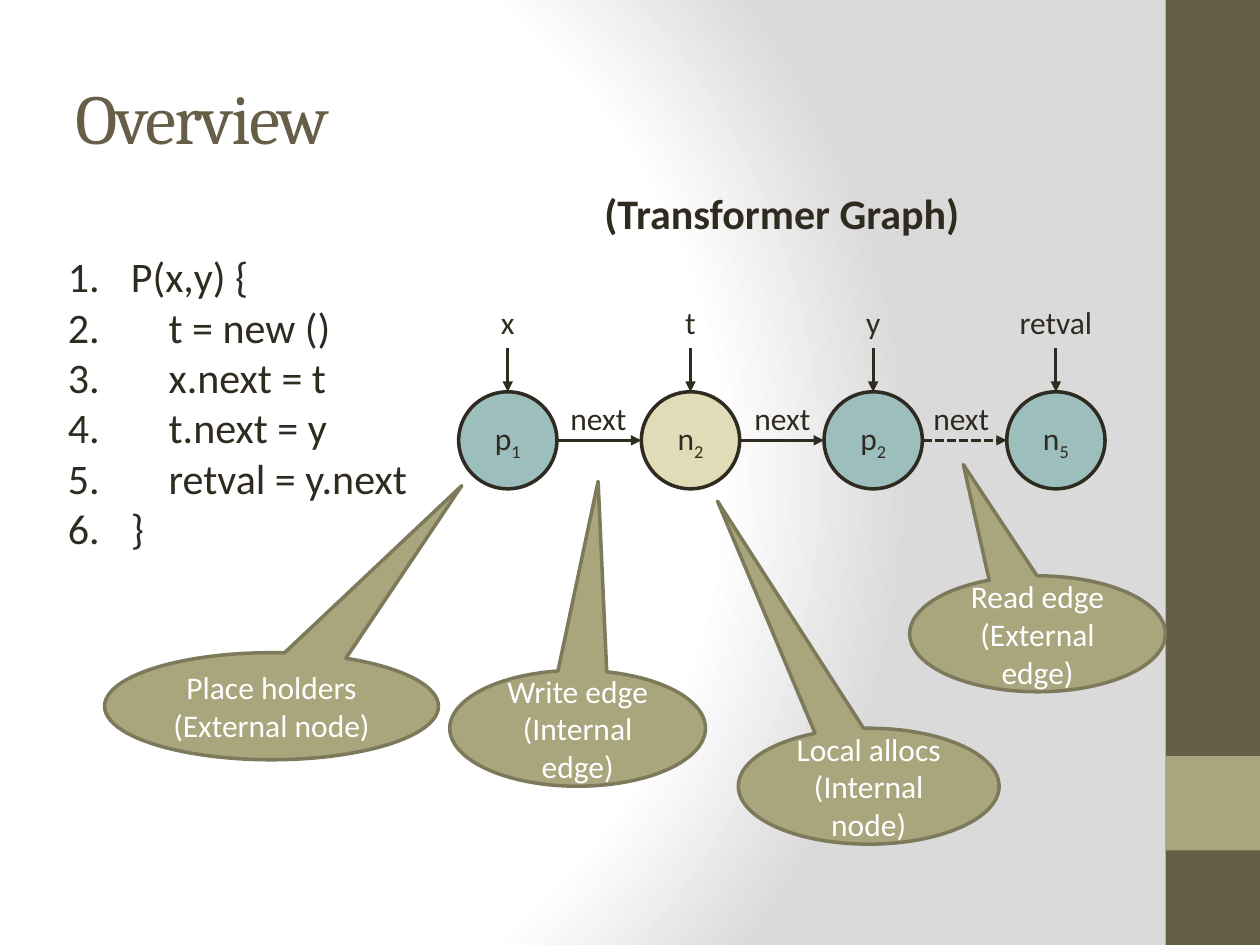
from pptx import Presentation
from pptx import util as u
from pptx.dml import color
from pptx.enum import dml, shapes, text
from pptx.oxml import parse_xml
from pptx.oxml.ns import qn
from lxml import etree

DARK, BROWN, OLIVE, EDGE = "2F2B20", "675E47", "A9A57C", "7D7A5C"
TEAL, CREAM, WHITE = "9CBEBD", "DFDCB7", "FFFFFF"
NS = ('xmlns:a="http://schemas.openxmlformats.org/drawingml/2006/main" '
      'xmlns:p="http://schemas.openxmlformats.org/presentationml/2006/main"')
KIND = shapes.MSO_SHAPE
LEFT, STEP, WIDE, TOP, TALL = 3.64, 1.45, 0.78, 3.11, 0.77


def rgb(code):
    return color.RGBColor.from_string(code)


def box(at):
    return [u.Inches(n) for n in at]


def add_run(para, words, size, code, font="Calibri", bold=False):
    run = para.add_run()
    run.text = words
    run.font.size = u.Pt(size)
    run.font.name = font
    run.font.bold = bold
    run.font.color.rgb = rgb(code)
    return run


def next_para(frame, index, align):
    para = frame.add_paragraph() if index else frame.paragraphs[0]
    para.alignment = align
    return para


def add_back(slide):
    stops = "".join(f'<a:gs pos="{pos}000"><a:srgbClr val="{code}"/></a:gs>'
                    for pos, code in ((0, WHITE), (75, WHITE), (100, "DADADA")))
    back = parse_xml(
        f'<p:bg {NS}><p:bgPr><a:gradFill rotWithShape="1"><a:gsLst>{stops}</a:gsLst>'
        '<a:path path="circle"><a:fillToRect l="20000" t="50000" r="100000" b="50000"/>'
        '</a:path></a:gradFill><a:effectLst/></p:bgPr></p:bg>')
    slide.element.cSld.insert(0, back)


def add_shape(slide, kind, at, fill, line=None):
    shape = slide.shapes.add_shape(kind, *box(at))
    shape.shadow.inherit = False
    shape.fill.solid()
    shape.fill.fore_color.rgb = rgb(fill)
    if line:
        shape.line.color.rgb = rgb(line)
        shape.line.width = u.Pt(2)
    else:
        shape.line.fill.background()
    shape.text_frame.vertical_anchor = text.MSO_ANCHOR.MIDDLE
    return shape


def add_text(slide, at, wrap=False, anchor=text.MSO_ANCHOR.MIDDLE):
    frame = slide.shapes.add_textbox(*box(at)).text_frame
    frame.word_wrap = wrap
    frame.vertical_anchor = anchor
    return frame


def add_label(slide, at, words, size=18, bold=False):
    para = next_para(add_text(slide, at), 0, text.PP_ALIGN.CENTER)
    add_run(para, words, size, DARK, bold=bold)


def add_title(slide, words):
    frame = add_text(slide, (0.5, 0.3, 8.33, 1.25), True)
    run = add_run(frame.paragraphs[0], words, 40, BROWN, "Cambria")
    run.font._element.set("spc", "-100")


def add_code(slide, at, lines):
    frame = add_text(slide, at, True, text.MSO_ANCHOR.TOP)
    for index, (words, indent) in enumerate(lines):
        para = next_para(frame, index, text.PP_ALIGN.LEFT)
        add_run(para, words, 24, DARK)
        props = para._p.get_or_add_pPr()
        props.set("marL", str(u.Inches(indent)))
        props.set("indent", str(-u.Inches(indent)))
        etree.SubElement(props, qn("a:buFont"), typeface="+mj-lt")
        etree.SubElement(props, qn("a:buAutoNum"), type="arabicPeriod")


def add_node(slide, left, name, sub, fill):
    node = add_shape(slide, KIND.OVAL, (left, TOP, WIDE, TALL), fill, DARK)
    para = next_para(node.text_frame, 0, text.PP_ALIGN.CENTER)
    add_run(para, name, 18, DARK)
    low = add_run(para, sub, 18, DARK)
    low.font._element.set("baseline", "-25000")


def add_arrow(slide, ends, dash=False):
    arrow = slide.shapes.add_connector(shapes.MSO_CONNECTOR.STRAIGHT, *box(ends))
    arrow.line.color.rgb = rgb(DARK)
    arrow.line.width = u.Pt(1.75)
    if dash:
        arrow.line.dash_style = dml.MSO_LINE.SQUARE_DOT
    etree.SubElement(arrow.line._get_or_add_ln(), qn("a:tailEnd"), type="triangle")
    etree.SubElement(arrow._element.spPr, qn("a:effectLst"))


def add_graph(slide):
    for index, (name, sub, fill, var) in enumerate((
            ("p", "1", TEAL, "x"), ("n", "2", CREAM, "t"),
            ("p", "2", TEAL, "y"), ("n", "5", TEAL, "retval"))):
        left = LEFT + STEP * index
        mid = left + WIDE / 2
        add_node(slide, left, name, sub, fill)
        add_label(slide, (left, 2.35, WIDE, 0.41), var)
        add_arrow(slide, (mid, 2.76, mid, TOP))
    mid = TOP + TALL / 2
    for index, left in enumerate((4.4, 5.86, 7.28)):
        start = LEFT + STEP * index
        add_arrow(slide, (start + WIDE, mid, start + STEP, mid), index == 2)
        add_label(slide, (left, TOP, 0.7, 0.41), "next")


def add_callout(slide, at, tip, lines):
    call = add_shape(slide, KIND.OVAL_CALLOUT, at, OLIVE, EDGE)
    call.adjustments[0], call.adjustments[1] = tip
    for index, words in enumerate(lines):
        para = next_para(call.text_frame, index, text.PP_ALIGN.CENTER)
        add_run(para, words, 18, WHITE)


def main():
    deck = Presentation()
    deck.slide_width, deck.slide_height = box((10, 7.5))
    slide = deck.slides.add_slide(deck.slide_layouts[6])
    add_back(slide)
    add_shape(slide, KIND.RECTANGLE, (9.25, 0, 0.75, 7.5), BROWN)
    add_shape(slide, KIND.RECTANGLE, (9.25, 6, 0.75, 0.75), OLIVE)
    add_title(slide, "Overview")
    add_code(slide, (0.44, 1.94, 3.08, 2.52), (
        ("P(x,y) {", 0.5), ("t = new ()", 0.8), ("x.next = t", 0.8),
        ("t.next = y", 0.8), ("retval = y.next", 0.8), ("}", 0.5)))
    add_graph(slide)
    add_label(slide, (4.68, 1.44, 3.05, 0.5), "(Transformer Graph)", 24, True)
    for at, tip, lines in (
            ((0.83, 5.18, 2.65, 0.85), (0.57, -2.06), ("Place holders", "(External node)")),
            ((7.22, 4.57, 2.03, 0.92), (-0.29, -1.46), ("Read edge", "(External edge)")),
            ((3.57, 5.32, 2.03, 0.92), (0.08, -2.13), ("Write edge", "(Internal edge)")),
            ((5.86, 5.78, 2.07, 0.92), (-0.58, -2.46), ("Local allocs", "(Internal node)"))):
        add_callout(slide, at, tip, lines)
    deck.save("out.pptx")


if __name__ == "__main__":
    main()
